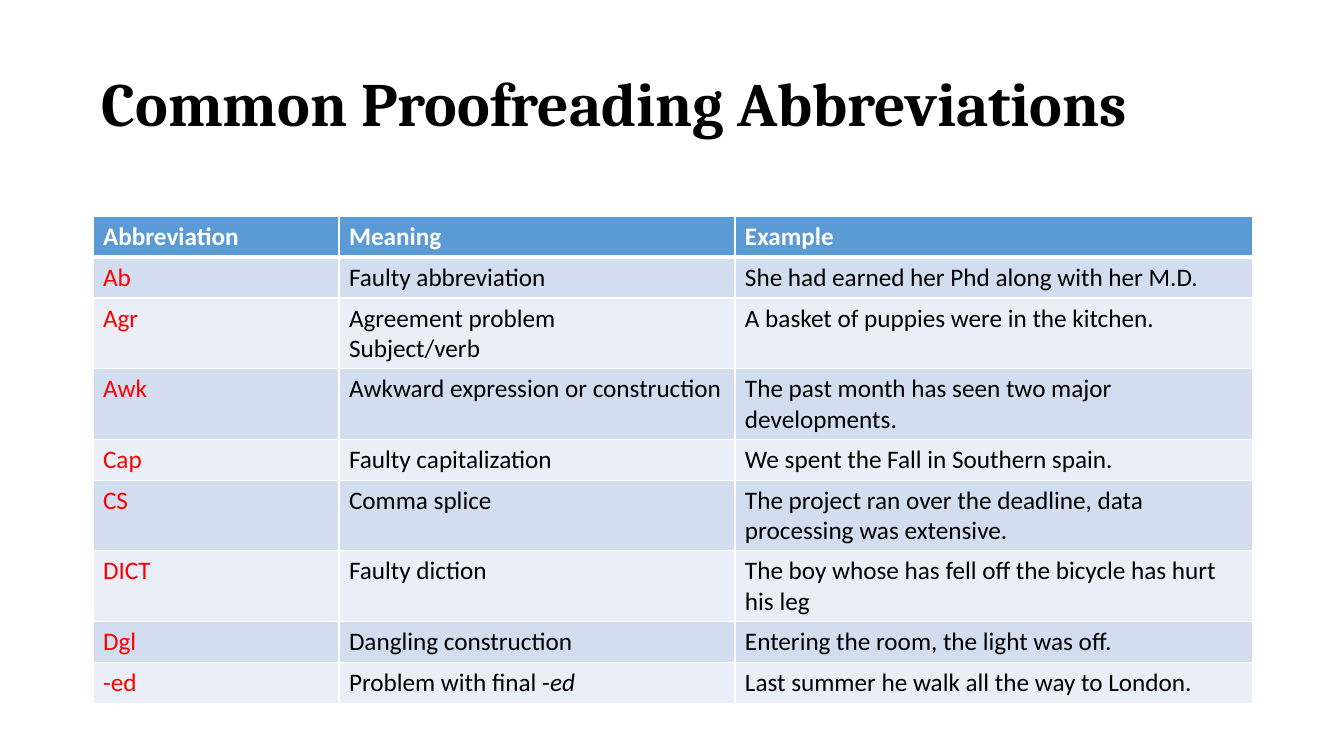
"""Build a slide with a table of common proofreading abbreviations."""
from lxml import etree
from pptx import Presentation
from pptx.dml.color import RGBColor
from pptx.enum.text import MSO_ANCHOR
from pptx.oxml.ns import qn
from pptx.util import Pt

TITLE = "Common Proofreading Abbreviations"
HEADINGS = ("Abbreviation", "Meaning", "Example")
ENTRIES = [
    ("Ab", "Faulty abbreviation", "She had earned her Phd along with her M.D."),
    ("Agr", "Agreement problem\nSubject/verb", "A basket of puppies were in the kitchen."),
    ("Awk", "Awkward expression or construction",
     "The past month has seen two major developments."),
    ("Cap", "Faulty capitalization", "We spent the Fall in Southern spain."),
    ("CS", "Comma splice",
     "The project ran over the deadline, data processing was extensive."),
    ("DICT", "Faulty diction", "The boy whose has fell off the bicycle has hurt his leg"),
    ("Dgl", "Dangling construction", "Entering the room, the light was off."),
    ("-ed", ("Problem with final -", "ed"), "Last summer he walk all the way to London."),
]

EMU_PER_PX = 914400 / 100.8
SLIDE_SIZE = (1344, 756)
TITLE_BOX = (92, 33, 1160, 146)
TABLE_LEFT, TABLE_TOP = 93, 216
COLUMN_WIDTHS = (246, 396, 518)
ROW_HEIGHT = 41

BLACK = RGBColor(0x00, 0x00, 0x00)
WHITE = RGBColor(0xFF, 0xFF, 0xFF)
RED = RGBColor(0xFF, 0x00, 0x00)
HEADER_BLUE = RGBColor(0x5B, 0x9B, 0xD5)
BANDS = (RGBColor(0xD2, 0xDE, 0xEF), RGBColor(0xEA, 0xEF, 0xF7))
MIDDLE = MSO_ANCHOR.MIDDLE


def px(length):
    return round(length * EMU_PER_PX)


def add_run(paragraph, text, font_name, size, color, bold=False, italic=False):
    run = paragraph.add_run()
    run.text = text
    run.font.name = font_name
    run.font.size = Pt(size)
    run.font.color.rgb = color
    run.font.bold = bold
    run.font.italic = italic


def set_borders(cell, widths):
    properties = cell._tc.get_or_add_tcPr()
    for position, (side, width) in enumerate(widths.items()):
        line = etree.Element(qn(f"a:ln{side}"), w=str(Pt(width)))
        fill = etree.SubElement(line, qn("a:solidFill"))
        etree.SubElement(fill, qn("a:srgbClr"), val=str(WHITE))
        properties.insert(position, line)


def fill_cell(cell, content, background, color, bold, top, bottom):
    cell.fill.solid()
    cell.fill.fore_color.rgb = background
    set_borders(cell, {"L": 1, "R": 1, "T": top, "B": bottom})
    plain, emphasis = content if isinstance(content, tuple) else (content, "")
    frame = cell.text_frame
    for index, line in enumerate(plain.split("\n")):
        paragraph = frame.add_paragraph() if index else frame.paragraphs[0]
        add_run(paragraph, line, "Calibri", 18, color, bold)
    if emphasis:
        add_run(paragraph, emphasis, "Calibri", 18, color, italic=True)


def add_title(slide):
    frame = slide.shapes.add_textbox(*map(px, TITLE_BOX)).text_frame
    frame.word_wrap = True
    frame.vertical_anchor = MIDDLE
    heading = frame.paragraphs[0]
    heading.line_spacing = 0.9
    add_run(heading, TITLE, "Cambria", 44, BLACK, bold=True)


def add_abbreviations(slide):
    rows = [HEADINGS, *ENTRIES]
    table = slide.shapes.add_table(
        len(rows), len(HEADINGS), px(TABLE_LEFT), px(TABLE_TOP),
        px(sum(COLUMN_WIDTHS)), px(ROW_HEIGHT * len(rows))).table
    table.horz_banding = False
    for column, width in zip(table.columns, COLUMN_WIDTHS):
        column.width = px(width)
    for r, entry in enumerate(rows):
        header = r == 0
        background = HEADER_BLUE if header else BANDS[(r - 1) % 2]
        for c, content in enumerate(entry):
            color = WHITE if header else RED if c == 0 else BLACK
            fill_cell(table.cell(r, c), content, background, color, header,
                      top=3 if r == 1 else 1, bottom=3 if header else 1)


def main():
    deck = Presentation()
    deck.slide_width, deck.slide_height = map(px, SLIDE_SIZE)
    slide = deck.slides.add_slide(deck.slide_layouts[6])
    add_title(slide)
    add_abbreviations(slide)
    deck.save("out.pptx")


if __name__ == "__main__":
    main()
